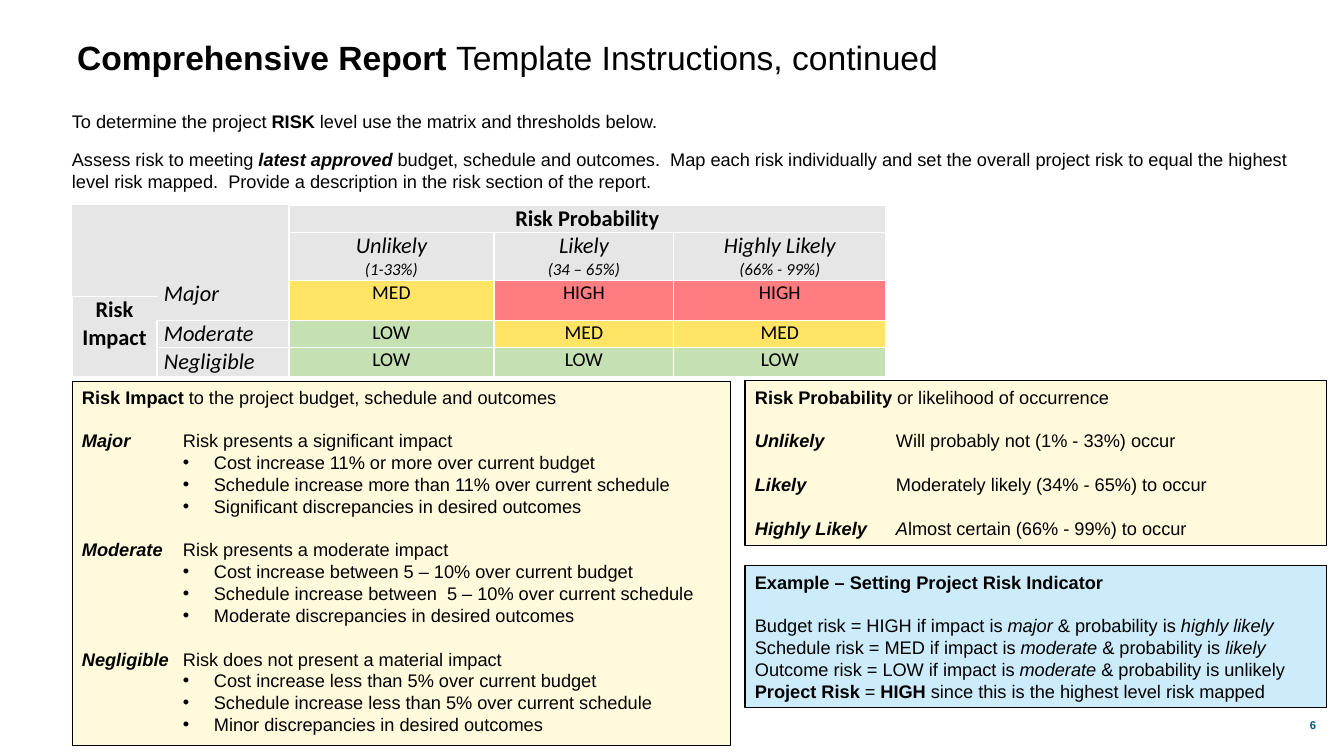
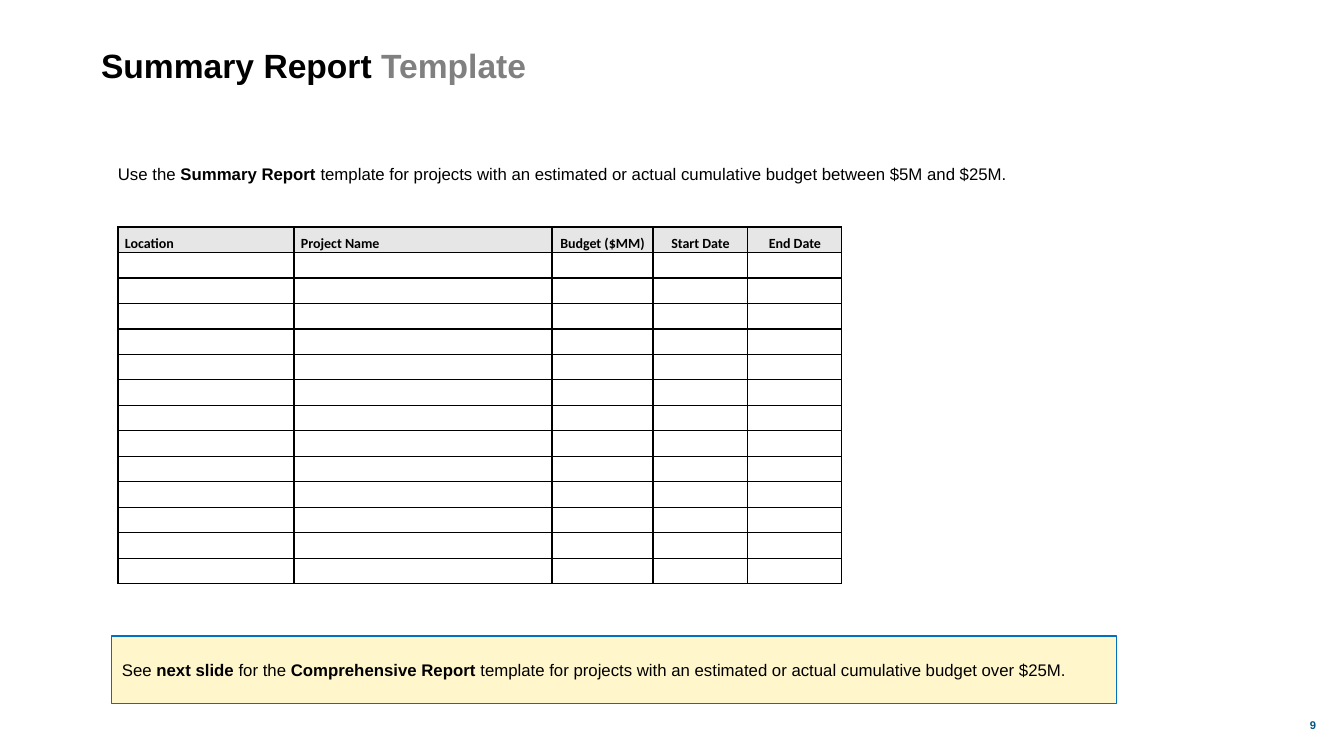
from typing import NamedTuple

from lxml import etree
from pptx import Presentation
from pptx import util as u
from pptx.dml.color import RGBColor
from pptx.enum import shapes, text
from pptx.oxml import ns

SCALE = 914400 / 100.8
BLACK = RGBColor(0x00, 0x00, 0x00)
WHITE = RGBColor(0xFF, 0xFF, 0xFF)
MUTED = RGBColor(0x80, 0x80, 0x80)
GRAY = RGBColor(0xE7, 0xE6, 0xE6)
RED = RGBColor(0xFF, 0x7C, 0x80)
AMBER = RGBColor(0xFF, 0xE4, 0x66)
GREEN = RGBColor(0xC5, 0xE0, 0xB3)
CREAM = RGBColor(0xFF, 0xFA, 0xDC)
YELLOW = RGBColor(0xFF, 0xF6, 0xCC)
SKY = RGBColor(0xCC, 0xEB, 0xFB)
BLUE = RGBColor(0x00, 0x70, 0xC0)
TEAL = RGBColor(0x00, 0x55, 0x81)
LEVELS = {"HIGH": RED, "MED": AMBER, "LOW": GREEN}
LEFT, CENTER, RIGHT = text.PP_ALIGN.LEFT, text.PP_ALIGN.CENTER, text.PP_ALIGN.RIGHT
TOP, MIDDLE, BOTTOM = text.MSO_ANCHOR.TOP, text.MSO_ANCHOR.MIDDLE, text.MSO_ANCHOR.BOTTOM


def px(length):
    return u.Emu(round(length * SCALE))


class Line(NamedTuple):
    runs: list
    before: float = 0
    bullet: bool = False
    tab: int = 0


class Deck:
    LINE_FACTOR = 1.2

    def __init__(self):
        self.presentation = Presentation()
        self.presentation.slide_width = px(1344)
        self.presentation.slide_height = px(756)
        self.slide = None

    def new_slide(self, left, top, width, runs, number):
        self.slide = self.presentation.slides.add_slide(self.presentation.slide_layouts[5])
        title = self.slide.shapes.title
        title.left, title.top, title.width, title.height = map(px, (left, top, width, 54))
        self.fill_frame(title.text_frame, [Line(runs)], 24, anchor=MIDDLE)
        self.text_box((1013, 705, 313, 40), [Line([(number, "b")])], 8,
                      color=TEAL, align=RIGHT, anchor=MIDDLE)

    def add_runs(self, paragraph, runs, size, font="Arial", color=BLACK):
        for words, style in runs:
            run = paragraph.add_run()
            run.text = words
            run.font.name = font
            run.font.size = u.Pt(size)
            run.font.bold = "b" in style
            run.font.italic = "i" in style
            run.font.color.rgb = MUTED if "g" in style else color

    def fill_frame(self, frame, lines, size, color=BLACK, align=LEFT, anchor=TOP):
        frame.word_wrap = True
        frame.auto_size = text.MSO_AUTO_SIZE.NONE
        frame.vertical_anchor = anchor
        for index, line in enumerate(lines):
            paragraph = frame.add_paragraph() if index else frame.paragraphs[0]
            properties = paragraph._p.get_or_add_pPr()
            if line.bullet:
                properties.set("marL", str(px(132)))
                properties.set("indent", str(px(-31)))
                etree.SubElement(properties, ns.qn("a:buFont"), typeface="Arial")
                etree.SubElement(properties, ns.qn("a:buChar"), char="•")
            if line.tab:
                tabs = etree.SubElement(properties, ns.qn("a:tabLst"))
                etree.SubElement(tabs, ns.qn("a:tab"), pos=str(px(line.tab)), algn="l")
            paragraph.alignment = align
            paragraph.line_spacing = u.Pt(size * self.LINE_FACTOR)
            paragraph.space_before = u.Pt(line.before)
            self.add_runs(paragraph, line.runs, size, color=color)

    def text_box(self, place, lines, size, **style):
        box = self.slide.shapes.add_textbox(*map(px, place))
        self.fill_frame(box.text_frame, lines, size, **style)

    def panel(self, place, lines, size, fill, line=BLACK, weight=0.75, anchor=TOP):
        shape = self.slide.shapes.add_shape(shapes.MSO_SHAPE.RECTANGLE, *map(px, place))
        shape.shadow.inherit = False
        shape.fill.solid()
        shape.fill.fore_color.rgb = fill
        shape.line.color.rgb = line
        shape.line.width = u.Pt(weight)
        self.fill_frame(shape.text_frame, lines, size, anchor=anchor)

    def table(self, left, top, widths, rows, height):
        frame = self.slide.shapes.add_table(
            rows, len(widths), px(left), px(top), px(sum(widths)), px(height))
        table = frame.table
        table.first_row = table.horz_banding = False
        for column, width in zip(table.columns, widths):
            column.width = px(width)
        return table

    def cell(self, cell, lines, fill, border, sides="LRTB", align=CENTER, anchor=TOP):
        cell.margin_left = cell.margin_right = px(7)
        cell.margin_top = cell.margin_bottom = 0
        cell.vertical_anchor = anchor
        properties = cell._tc.get_or_add_tcPr()
        for side in "LRTB":
            edge = etree.SubElement(properties, ns.qn("a:ln" + side), w=str(u.Pt(1)))
            if side in sides:
                solid = etree.SubElement(edge, ns.qn("a:solidFill"))
                etree.SubElement(solid, ns.qn("a:srgbClr"), val=str(border))
            else:
                etree.SubElement(edge, ns.qn("a:noFill"))
        cell.fill.solid()
        cell.fill.fore_color.rgb = fill
        frame = cell.text_frame
        for index, (words, size, style) in enumerate(lines):
            paragraph = frame.add_paragraph() if index else frame.paragraphs[0]
            paragraph.alignment = align
            self.add_runs(paragraph, [(words, style)], size, font="Calibri")
        if not lines:
            etree.SubElement(frame.paragraphs[0]._p, ns.qn("a:endParaRPr"), sz="800")


def risk_matrix(deck):
    heights = [27, 48, 16, 24, 27, 29]
    table = deck.table(72, 205, [85, 132, 205, 180, 212], len(heights), sum(heights))
    for row, height in zip(table.rows, heights):
        row.height = px(height)
    spans = [(0, 0, 2, 0), (0, 1, 1, 1), (0, 2, 0, 4), (3, 0, 5, 0)]
    spans += [(2, column, 3, column) for column in range(1, 5)]
    for top, left, bottom, right in spans:
        table.cell(top, left).merge(table.cell(bottom, right))

    contents = {
        (0, 2): [("Risk Probability", 16, "b")],
        (3, 0): [("Risk", 16, "b"), ("Impact", 16, "b")],
    }
    likelihoods = [("Unlikely", "(1-33%)"), ("Likely", "(34 – 65%)"),
                   ("Highly Likely", "(66% - 99%)")]
    for column, (name, share) in enumerate(likelihoods, 2):
        contents[1, column] = [(name, 16, "i"), (share, 12, "i")]
    impacts = {2: ("Major", "MED", "HIGH", "HIGH"),
               4: ("Moderate", "LOW", "MED", "MED"),
               5: ("Negligible", "LOW", "LOW", "LOW")}
    for row, (impact, *levels) in impacts.items():
        contents[row, 1] = [(impact, 16, "i")]
        for column, level in enumerate(levels, 2):
            contents[row, column] = [(level, 14, "")]

    open_sides = {(row, 0): "B" for row in range(3)}
    open_sides.update({(0, 1): "R", (1, 1): "R", (2, 1): "RB", (3, 1): "RB"})
    for row in range(len(heights)):
        for column in range(5):
            lines = contents.get((row, column), [])
            level_row = 2 if row == 3 else row
            level = impacts[level_row][column - 1] if level_row > 1 and column > 1 else ""
            deck.cell(table.cell(row, column), lines, LEVELS.get(level, GRAY), WHITE,
                      sides=open_sides.get((row, column), "LRTB"),
                      align=LEFT if column == 1 else CENTER)


def instructions_slide(deck):
    size = 13
    gap = size * deck.LINE_FACTOR
    deck.new_slide(67, 30, 1210, [("Comprehensive Report ", "b"),
                                  ("Template Instructions, continued", "")], "6")
    deck.text_box((62, 105, 1264, 112), [
        Line([("To determine the project ", ""), ("RISK ", "b"),
              ("level use the matrix and thresholds below.", "")]),
        Line([("Assess risk to meeting ", ""), ("latest approved ", "bi"),
              ("budget, schedule and outcomes.  Map each risk individually and set the "
               "overall project risk to equal the highest level risk mapped.  Provide a "
               "description in the risk section of the report.", "")], before=12),
    ], size)
    risk_matrix(deck)

    impact_lines = [Line([("Risk Impact ", "b"),
                          ("to the project budget, schedule and outcomes", "")])]
    impacts = [
        ("Major", "Risk presents a significant impact",
         ["Cost increase 11% or more over current budget",
          "Schedule increase more than 11% over current schedule",
          "Significant discrepancies in desired outcomes"]),
        ("Moderate", "Risk presents a moderate impact",
         ["Cost increase between 5 – 10% over current budget",
          "Schedule increase between  5 – 10% over current schedule",
          "Moderate discrepancies in desired outcomes"]),
        ("Negligible", "Risk does not present a material impact",
         ["Cost increase less than 5% over current budget",
          "Schedule increase less than 5% over current schedule",
          "Minor discrepancies in desired outcomes"]),
    ]
    for name, meaning, thresholds in impacts:
        impact_lines.append(Line([(name, "bi"), ("\t" + meaning, "")], before=gap, tab=101))
        impact_lines += [Line([(threshold, "")], bullet=True) for threshold in thresholds]
    deck.panel((72, 381, 658, 364), impact_lines, size, CREAM, weight=0.25)

    probabilities = [
        [("Unlikely", "bi"), ("\tWill probably not (1% - 33%) occur", "")],
        [("Likely", "bi"), ("\tModerately likely (34% - 65%) to occur", "")],
        [("Highly Likely", "bi"), ("\tA", "i"), ("lmost certain (66% - 99%) to occur", "")],
    ]
    deck.panel((745, 381, 582, 165),
               [Line([("Risk Probability ", "b"), ("or likelihood of occurrence", "")])]
               + [Line(runs, before=gap, tab=141) for runs in probabilities], size, CREAM)

    deck.panel((745, 566, 582, 142), [
        Line([("Example – Setting Project Risk Indicator", "b")]),
        Line([("Budget risk = HIGH if impact is ", ""), ("major ", "i"),
              ("& probability is ", ""), ("highly likely", "i")], before=gap),
        Line([("Schedule risk = MED if impact is ", ""), ("moderate", "i"),
              (" & probability is ", ""), ("likely", "i")]),
        Line([("Outcome risk = LOW if impact is ", ""), ("moderate ", "i"),
              ("& probability is unlikely", "")]),
        Line([("Project Risk ", "b"), ("= ", ""), ("HIGH", "b"),
              (" since this is the highest level risk mapped", "")]),
    ], size, SKY)


def summary_slide(deck):
    deck.new_slide(91, 38, 459, [("Summary Report ", "b"), ("Template", "bg")], "9")
    deck.text_box((108, 159, 1134, 39), [
        Line([("Use the ", ""), ("Summary Report ", "b"),
              ("template for projects with an estimated or actual cumulative budget "
               "between $5M and $25M.", "")])], 12)

    headings = ["Location", "Project Name", "Budget ($MM)", "Start Date", "End Date"]
    rows = 14
    table = deck.table(118, 227, [176, 258, 101, 95, 94], rows, 357)
    for row in range(rows):
        for column, heading in enumerate(headings):
            deck.cell(table.cell(row, column), [] if row else [(heading, 10, "b")],
                      WHITE if row else GRAY, BLACK,
                      align=LEFT if column < 2 else CENTER, anchor=BOTTOM)

    deck.panel((112, 636, 1005, 68), [
        Line([("See ", ""), ("next slide ", "b"), ("for the ", ""),
              ("Comprehensive Report ", "b"),
              ("template for projects with an estimated or actual cumulative budget "
               "over $25M.", "")])], 12, YELLOW, line=BLUE, anchor=MIDDLE)


def main():
    deck = Deck()
    instructions_slide(deck)
    summary_slide(deck)
    deck.presentation.save("out.pptx")


if __name__ == "__main__":
    main()
